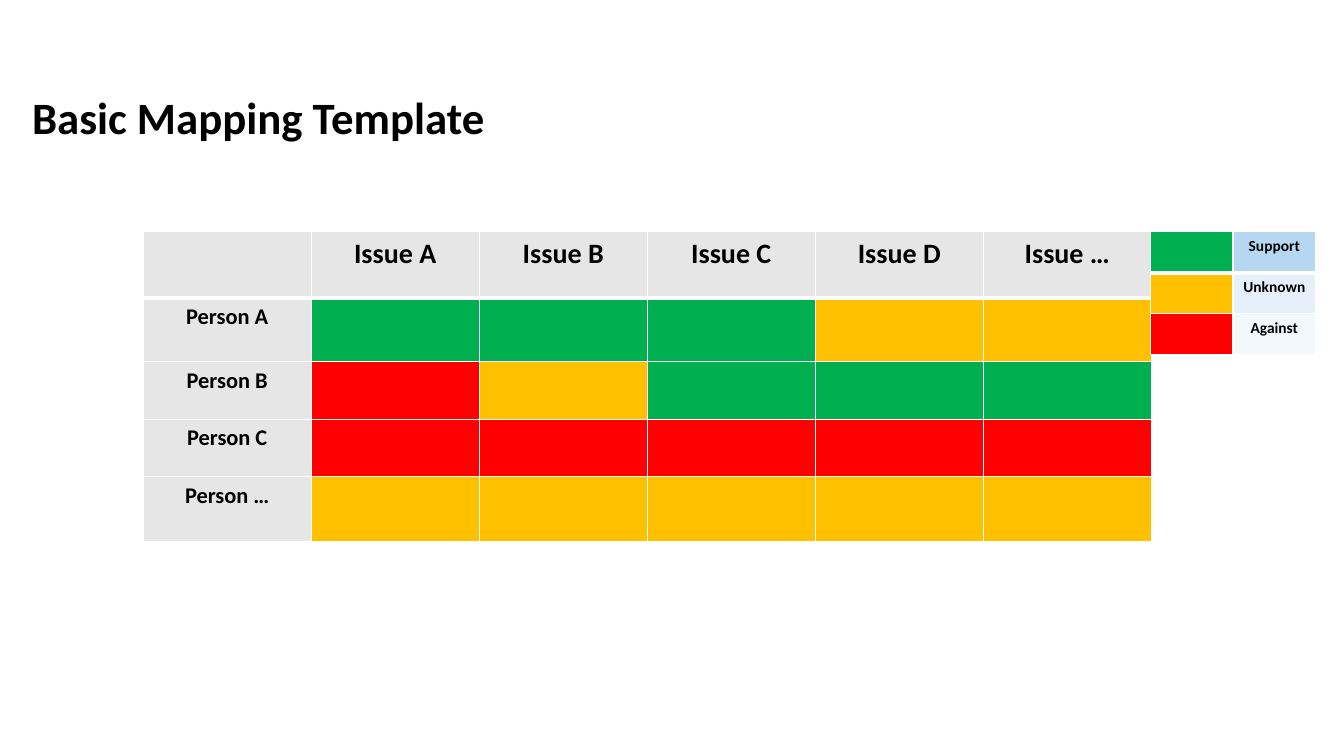
import pptx
import pptx.util
import pptx.dml.color
import pptx.enum.text
import pptx.oxml
from dataclasses import dataclass
from lxml import etree
from pptx.util import Inches


@dataclass(frozen=True)
class Theme:
    font: str = "Calibri"
    text: str = "000000"
    border: str = "FFFFFF"
    label: str = "E7E6E6"
    support: str = "00B050"
    unknown: str = "FFC000"
    against: str = "FF0000"
    legend_tints: tuple = ("B5D7F2", "E5F0FA", "F3F8FC")
    title_size: int = 32
    issue_size: int = 20
    person_size: int = 16
    legend_size: int = 11
    line: int = 1
    header_line: int = 3


THEME = Theme()
STANCES = {"S": THEME.support, "U": THEME.unknown, "A": THEME.against}
ISSUES = ["Issue A", "Issue B", "Issue C", "Issue D", "Issue …"]
PEOPLE = {
    "Person A": "SSSUU",
    "Person B": "AUSSS",
    "Person C": "AAAAA",
    "Person …": "UUUUU",
}
LEGEND = {"Support": "S", "Unknown": "U", "Against": "A"}


def rgb(value):
    return pptx.dml.color.RGBColor.from_string(value)


def write(p, text, size, **formats):
    for name, value in formats.items():
        setattr(p, name, value)
    r = p.add_run()
    r.text = text
    for name, value in {"name": THEME.font, "size": pptx.util.Pt(size), "bold": True}.items():
        setattr(r.font, name, value)
    r.font.color.rgb = rgb(THEME.text)


def add_borders(cell, row):
    widths = {
        "lnL": THEME.line,
        "lnR": THEME.line,
        "lnT": THEME.header_line if row == 1 else THEME.line,
        "lnB": THEME.header_line if row == 0 else THEME.line,
    }
    tcPr = cell._tc.get_or_add_tcPr()
    for i, (side, width) in enumerate(widths.items()):
        ln = etree.Element(pptx.oxml.ns.qn(f"a:{side}"), w=str(pptx.util.Pt(width)))
        fill = etree.SubElement(ln, pptx.oxml.ns.qn("a:solidFill"))
        etree.SubElement(fill, pptx.oxml.ns.qn("a:srgbClr"), val=THEME.border)
        tcPr.insert(i, ln)


def add_grid(s, left, top, width, heights, rows):
    columns = len(rows[0])
    table = s.shapes.add_table(
        len(rows), columns, Inches(left), Inches(top), Inches(width), Inches(sum(heights))
    ).table
    for column in table.columns:
        column.width = Inches(width / columns)
    for i, (height, row) in enumerate(zip(heights, rows)):
        table.rows[i].height = Inches(height)
        for j, (text, color, size) in enumerate(row):
            cell = table.cell(i, j)
            cell.fill.solid()
            cell.fill.fore_color.rgb = rgb(color)
            add_borders(cell, i)
            if text:
                write(cell.text_frame.paragraphs[0], text, size,
                      alignment=pptx.enum.text.PP_ALIGN.CENTER)


def add_title(s, left, top, width, height):
    tf = s.shapes.add_textbox(Inches(left), Inches(top), Inches(width), Inches(height)).text_frame
    tf.word_wrap = True
    tf.vertical_anchor = pptx.enum.text.MSO_ANCHOR.MIDDLE
    write(tf.paragraphs[0], "Basic Mapping Template", THEME.title_size, line_spacing=0.9)


def add_mapping(s, left, top, width, heights):
    rows = [[(text, THEME.label, THEME.issue_size) for text in ["", *ISSUES]]]
    for person, stances in PEOPLE.items():
        rows.append([(person, THEME.label, THEME.person_size)]
                    + [("", STANCES[stance], None) for stance in stances])
    add_grid(s, left, top, width, heights, rows)


def add_legend(s, left, top, width, height):
    rows = [
        [("", STANCES[stance], None), (text, tint, THEME.legend_size)]
        for (text, stance), tint in zip(LEGEND.items(), THEME.legend_tints)
    ]
    add_grid(s, left, top, width, [height / len(rows)] * len(rows), rows)


def main():
    prs = pptx.Presentation()
    prs.slide_width, prs.slide_height = Inches(13.33), Inches(7.5)
    s = prs.slides.add_slide(prs.slide_layouts[6])
    add_mapping(s, 1.42, 2.3, 10, [0.66, 0.63, 0.57, 0.57, 0.64])
    add_legend(s, 11.41, 2.3, 1.64, 1.22)
    add_title(s, 0.22, 0.89, 9, 0.59)
    prs.save("out.pptx")


if __name__ == "__main__":
    main()
